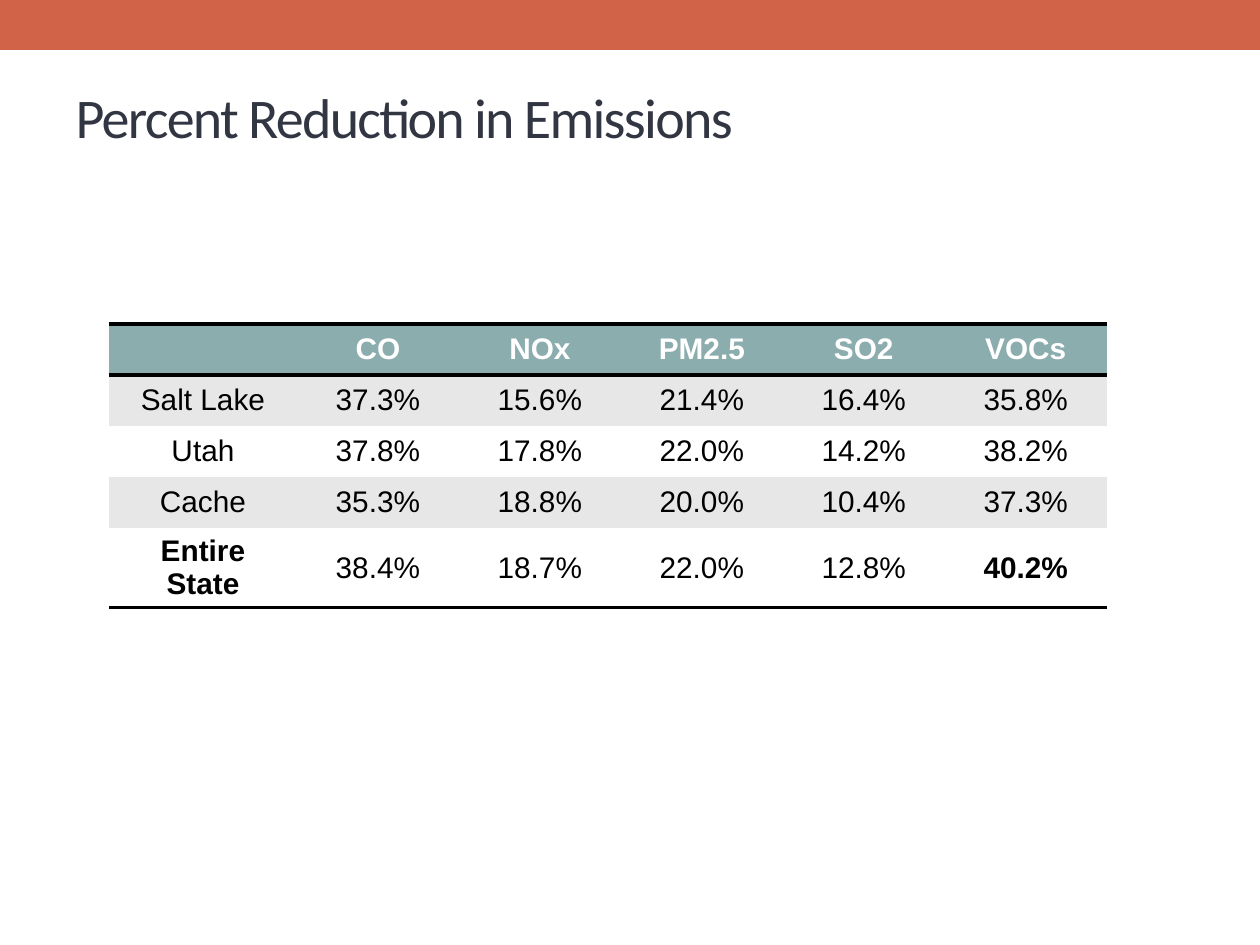
from lxml.etree import SubElement
from pptx import Presentation
from pptx.dml.color import RGBColor
from pptx.enum.shapes import MSO_SHAPE
from pptx.enum.text import MSO_ANCHOR, PP_ALIGN
from pptx.oxml.ns import qn
from pptx.util import Inches, Pt

PX_PER_INCH = 126
ORANGE = RGBColor(0xD1, 0x63, 0x49)
NAVY = RGBColor(0x32, 0x36, 0x43)
TEAL = RGBColor(0x8C, 0xAD, 0xAE)
GREY = RGBColor(0xE7, 0xE7, 0xE7)
WHITE = RGBColor(0xFF, 0xFF, 0xFF)
BLACK = RGBColor(0, 0, 0)

HEADER = ["", "CO", "NOx", "PM2.5", "SO2", "VOCs"]
REDUCTIONS = [
    ["Salt Lake", "37.3%", "15.6%", "21.4%", "16.4%", "35.8%"],
    ["Utah", "37.8%", "17.8%", "22.0%", "14.2%", "38.2%"],
    ["Cache", "35.3%", "18.8%", "20.0%", "10.4%", "37.3%"],
    ["Entire State", "38.4%", "18.7%", "22.0%", "12.8%", "40.2%"],
]
EMPHASISED = {"Entire State", "40.2%"}


def px(length):
    return round(length * Inches(1) / PX_PER_INCH)


class SlideWriter:
    title_font, body_font = "Calibri", "Arial"
    title_size, body_size = Pt(32), Pt(17)
    rule_width = Pt(2)

    def __init__(self, page):
        self.page = page

    def band(self, left, top, width, height, color):
        box = self.page.shapes.add_shape(
            MSO_SHAPE.RECTANGLE, px(left), px(top), px(width), px(height))
        box.shadow.inherit = False
        box.fill.solid()
        box.fill.fore_color.rgb = color
        box.line.fill.background()

    def title(self, text, left, top, width, height):
        box = self.page.shapes.title
        box.left, box.top, box.width, box.height = map(px, (left, top, width, height))
        frame = box.text_frame
        frame.vertical_anchor = MSO_ANCHOR.MIDDLE
        para = frame.paragraphs[0]
        para.alignment = PP_ALIGN.LEFT
        para.font.name, para.font.size = self.title_font, self.title_size
        para.font.color.rgb = NAVY
        span = para.add_run()
        span.text = text
        span.font._element.set("spc", "-100")

    def table(self, rows, left, top, widths, row_height):
        grid = self.page.shapes.add_table(
            len(rows), len(widths), px(left), px(top),
            px(sum(widths)), px(row_height * len(rows))).table
        for column, width in zip(grid.columns, widths):
            column.width = px(width)
        ruled_edges = {0, 1, len(rows)}
        for r, texts in enumerate(rows):
            grid.rows[r].height = px(row_height)
            fill = TEAL if r == 0 else GREY if r % 2 else WHITE
            for c, text in enumerate(texts):
                cell = grid.cell(r, c)
                self.borders(cell, r in ruled_edges, r + 1 in ruled_edges)
                cell.fill.solid()
                cell.fill.fore_color.rgb = fill
                self.cell_text(cell, text, r == 0, c == 0)

    def borders(self, cell, top, bottom):
        properties = cell._tc.get_or_add_tcPr()
        sides = {"lnL": False, "lnR": False, "lnT": top, "lnB": bottom}
        for side, ruled in sides.items():
            line = SubElement(properties, qn(f"a:{side}"))
            if ruled:
                line.set("w", str(self.rule_width))
                paint = SubElement(line, qn("a:solidFill"))
                SubElement(paint, qn("a:srgbClr")).set("val", str(BLACK))
            else:
                SubElement(line, qn("a:noFill"))

    def cell_text(self, cell, text, is_header, is_label):
        cell.vertical_anchor = MSO_ANCHOR.MIDDLE
        if not is_label:
            cell.margin_left = cell.margin_right = 0
            cell.margin_top = cell.margin_bottom = 0
        cell.text = text
        para = cell.text_frame.paragraphs[0]
        para.alignment = PP_ALIGN.CENTER
        font = para.font
        font.name, font.size = self.body_font, self.body_size
        font.bold = is_header or text in EMPHASISED
        font.color.rgb = WHITE if is_header else BLACK


def main():
    deck = Presentation()
    deck.slide_width, deck.slide_height = px(1260), px(945)
    writer = SlideWriter(deck.slides.add_slide(deck.slide_layouts[5]))

    # Top band and title
    writer.band(0, 0, 1260, 50, ORANGE)
    writer.title("Percent Reduction in Emissions", 63, 72, 1134, 88)

    # Reductions by county and pollutant
    widths = [188] + [162] * (len(HEADER) - 1)
    writer.table([HEADER] + REDUCTIONS, 109, 324, widths, 51)

    deck.save("out.pptx")


if __name__ == "__main__":
    main()
